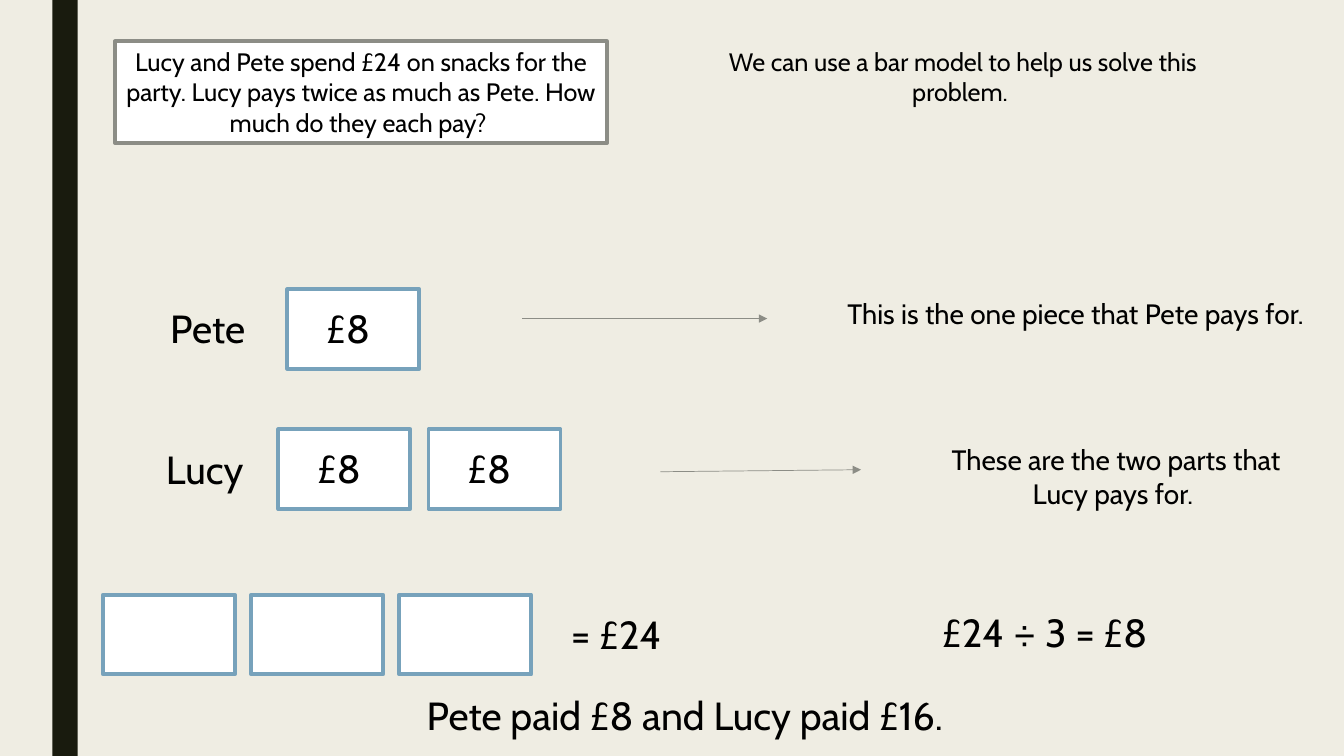
from dataclasses import dataclass

from lxml import etree
from pptx import Presentation
from pptx import util as u
from pptx.dml.color import RGBColor
from pptx.enum import shapes, text
from pptx.oxml.ns import qn

PX = 9144  # EMU per px, 100 px to the inch


@dataclass(frozen=True)
class Theme:
    font: str = "Cabin"
    background: str = "EFEDE3"
    sidebar: str = "191B0E"
    ink: str = "000000"
    paper: str = "FFFFFF"
    grey: str = "8C8D86"
    blue: str = "77A2BB"
    problem_size: int = 18
    note_size: int = 20
    value_size: int = 28
    outline: float = 2.75
    arrow: float = 0.5


THEME = Theme()
BAR_WIDTH, BAR_HEIGHT = 131, 79
VALUE_LEFT, VALUE_TOP = 29, 10  # place of the amount inside a bar
LABEL_HEIGHT = 57


def px(*lengths):
    return [u.Emu(length * PX) for length in lengths]


def color(name):
    return RGBColor.from_string(name)


def write(shape, wording, size, align=text.PP_ALIGN.CENTER, anchor=text.MSO_ANCHOR.TOP):
    frame = shape.text_frame
    frame.text = wording
    frame.word_wrap = True
    frame.vertical_anchor = anchor
    paragraph = frame.paragraphs[0]
    paragraph.alignment = align
    for run in paragraph.runs:
        run.font.name = THEME.font
        run.font.size = u.Pt(size)
        run.font.color.rgb = color(THEME.ink)


def add_text(slide, box, wording, size, align=text.PP_ALIGN.CENTER):
    write(slide.shapes.add_textbox(*px(*box)), wording, size, align)


def paint(shape, fill, line=None):
    shape.fill.solid()
    shape.fill.fore_color.rgb = color(fill)
    if line:
        shape.line.color.rgb = color(line)
        shape.line.width = u.Pt(THEME.outline)
    else:
        shape.line.fill.background()


def add_rectangle(slide, box, fill, line=None):
    shape = slide.shapes.add_shape(shapes.MSO_SHAPE.RECTANGLE, *px(*box))
    shape.shadow.inherit = False
    paint(shape, fill, line)


def add_arrow(slide, start, end):
    arrow = slide.shapes.add_connector(shapes.MSO_CONNECTOR.STRAIGHT, *px(*start, *end))
    arrow.line.color.rgb = color(THEME.grey)
    arrow.line.width = u.Pt(THEME.arrow)
    etree.SubElement(arrow.line._get_or_add_ln(), qn("a:tailEnd"), type="triangle")
    etree.SubElement(arrow._element.spPr, qn("a:effectLst"))


def add_bars(slide, left, top, count, step, value=None):
    """A row of equal bars, each with its amount if one is given."""
    for index in range(count):
        x = left + index * step
        add_rectangle(slide, (x, top, BAR_WIDTH, BAR_HEIGHT), THEME.paper, THEME.blue)
        if value:
            value_box = (x + VALUE_LEFT, top + VALUE_TOP, 66, LABEL_HEIGHT)
            add_text(slide, value_box, value, THEME.value_size, text.PP_ALIGN.LEFT)


def add_problem(slide, box):
    """The framed question, with the hint to its right."""
    left, top, width, height = box
    title = slide.shapes.title
    title.left, title.top, title.width, title.height = px(*box)
    paint(title, THEME.paper, THEME.grey)
    write(
        title,
        "Lucy and Pete spend £24 on snacks for the party. "
        "Lucy pays twice as much as Pete. How much do they each pay? ",
        THEME.problem_size,
    )
    add_text(
        slide,
        (left + 597, top, width, 71),
        "We can use a bar model to help us solve this problem. ",
        THEME.problem_size,
    )


def add_person(slide, name_box, bars, arrow, note_box, note, name):
    """One row of the bar model: name, bars, arrow and explanation."""
    add_text(slide, name_box, name, THEME.value_size)
    add_bars(slide, *bars, step=149, value="£8")
    add_arrow(slide, *arrow)
    add_text(slide, note_box, note, THEME.note_size)


def add_total(slide, left, top):
    """All the bars together, the calculation and the answer."""
    add_bars(slide, left, top, count=3, step=147)
    for box, wording in (
        ((left + 416, top + 11, 195, LABEL_HEIGHT), "= £24 "),
        ((left + 759, top + 9, 359, LABEL_HEIGHT), "£24 ÷ 3 = £8 "),
        ((left + 66, top + 91, 1031, LABEL_HEIGHT), "Pete paid £8 and Lucy paid £16. "),
    ):
        add_text(slide, box, wording, THEME.value_size)


def main():
    presentation = Presentation()
    presentation.slide_width, presentation.slide_height = px(1333, 750)
    slide = presentation.slides.add_slide(presentation.slide_layouts[5])

    # Background and sidebar
    slide.background.fill.solid()
    slide.background.fill.fore_color.rgb = color(THEME.background)
    add_rectangle(slide, (52, 0, 25, 750), THEME.sidebar)

    # Question and bar model
    add_problem(slide, (114, 41, 488, 101))
    add_person(
        slide,
        name="Pete",
        name_box=(133, 297, 146, LABEL_HEIGHT),
        bars=(285, 287, 1),
        arrow=((518, 316), (761, 316)),
        note_box=(826, 289, 488, 44),
        note="This is the one piece that Pete pays for. ",
    )
    add_person(
        slide,
        name="Lucy",
        name_box=(130, 437, 146, LABEL_HEIGHT),
        bars=(276, 426, 2),
        arrow=((655, 468), (854, 466)),
        note_box=(926, 434, 362, 77),
        note="These are the two parts that Lucy pays for. ",
    )
    add_total(slide, 102, 590)

    presentation.save("out.pptx")


if __name__ == "__main__":
    main()
